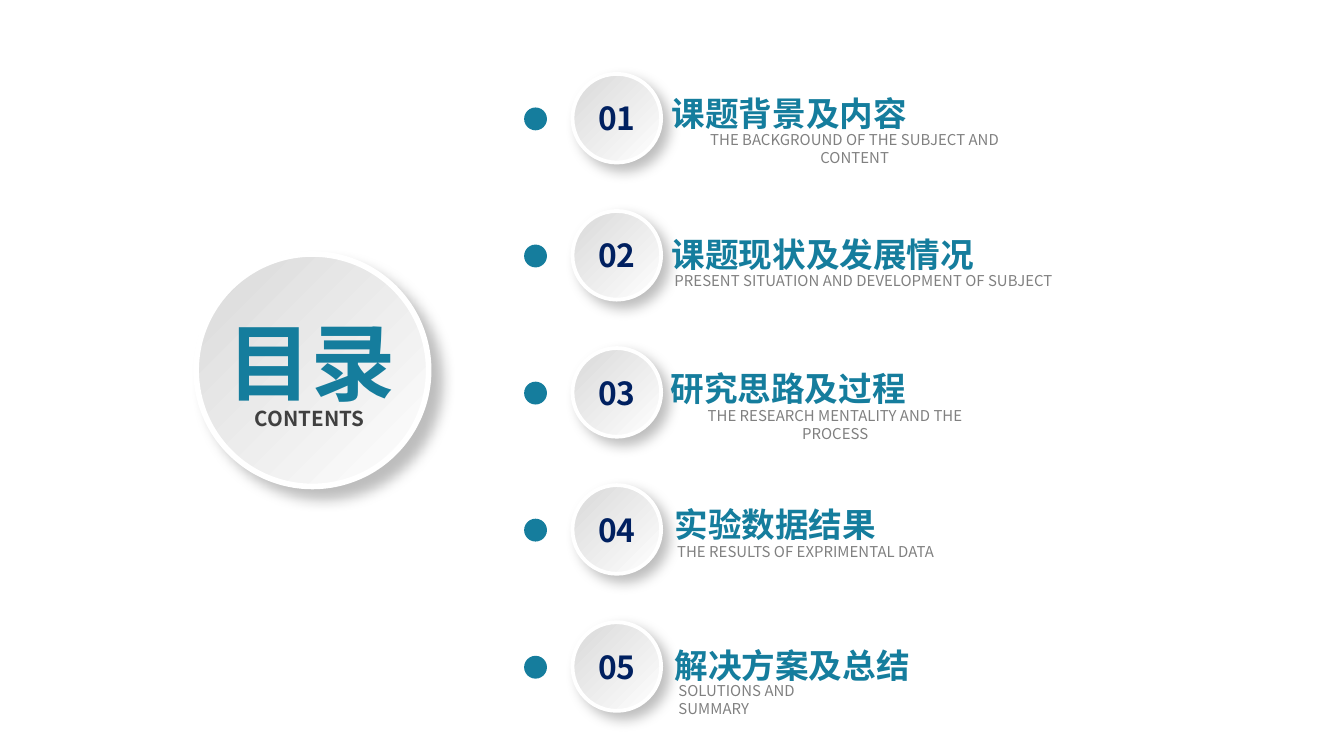
from lxml import etree
from pptx import Presentation
from pptx.dml.color import RGBColor
from pptx.enum import shapes, text
from pptx.oxml.ns import qn
from pptx.util import Inches, Pt

TEAL = RGBColor(0x15, 0x7D, 0x9D)
NAVY = RGBColor(0x00, 0x20, 0x60)
DARK = RGBColor(0x40, 0x40, 0x40)
GREY = RGBColor(0x80, 0x80, 0x80)
SILVER = RGBColor(0xD9, 0xD9, 0xD9)
WHITE = RGBColor(0xFF, 0xFF, 0xFF)
FONT = "Noto Sans CJK SC"
LEFT, CENTER = text.PP_ALIGN.LEFT, text.PP_ALIGN.CENTER
TIGHT = {"margin_left": Inches(0.07), "margin_right": Inches(0.07),
         "margin_top": Inches(0.04), "margin_bottom": Inches(0.04)}


def write(box, words, size, color, bold=True, align=LEFT, **frame_format):
    """Fill a shape with one formatted line, top-anchored unless told otherwise."""
    frame = box.text_frame
    settings = {"word_wrap": True, "auto_size": text.MSO_AUTO_SIZE.NONE,
                "vertical_anchor": text.MSO_ANCHOR.TOP, **frame_format}
    for name, value in settings.items():
        setattr(frame, name, value)
    paragraph = frame.paragraphs[0]
    paragraph.alignment = align
    span = paragraph.add_run()
    span.text = words
    span.font.color.rgb = color
    for name, value in {"size": Pt(size), "bold": bold, "name": FONT}.items():
        setattr(span.font, name, value)
    etree.SubElement(span.font._element, qn("a:ea"), typeface=FONT)


def add_raised_disc(left, top, size, line_width, distance):
    """Add a grey-to-white disc with a white rim and a soft shadow."""
    disc = page.shapes.add_shape(shapes.MSO_SHAPE.OVAL, Inches(left), Inches(top),
                                 Inches(size), Inches(size))
    disc.fill.gradient()
    disc.fill.gradient_angle = 315
    for stop, color, position in zip(disc.fill.gradient_stops, (SILVER, WHITE), (0, 1)):
        stop.color.rgb = color
        stop.position = position
    disc.line.color.rgb = WHITE
    disc.line.width = Pt(line_width)
    disc.shadow.inherit = False
    effects = disc.element.spPr.find(qn("a:effectLst"))
    shadow = etree.SubElement(effects, qn("a:outerShdw"), blurRad=str(Pt(7)),
                              dist=str(Pt(distance)), dir="2700000",
                              algn="tl", rotWithShape="0")
    black = etree.SubElement(shadow, qn("a:srgbClr"), val="000000")
    etree.SubElement(black, qn("a:alpha"), val="25000")
    return disc


deck = Presentation()
deck.slide_width = Inches(10)
deck.slide_height = deck.slide_width * 9 // 16
page = deck.slides.add_slide(deck.slide_layouts[5])

# Contents medallion, with the slide title on top of it
add_raised_disc(1.46, 1.89, 1.73, 3, 8)
title = page.shapes.title
title.left, title.top = Inches(1.53), Inches(2.27)
title.width, title.height = Inches(1.58), Inches(0.83)
title.element.getparent().append(title.element)
write(title, "目录", 45, TEAL, align=CENTER, **TIGHT)
caption = page.shapes.add_textbox(Inches(1.57), Inches(2.98), Inches(1.47), Inches(0.26))
write(caption, "CONTENTS", 11, DARK, align=CENTER, **TIGHT)

# heading, left, top, width; subtitle, left, top, width, alignment
CHAPTERS = [
    ("课题背景及内容", 4.9, 0.64, 1.97,
     "THE BACKGROUND OF THE SUBJECT AND CONTENT", 5.09, 0.92, 2.54, CENTER),
    ("课题现状及发展情况", 4.9, 1.69, 2.47,
     "PRESENT SITUATION AND DEVELOPMENT OF SUBJECT", 4.92, 1.97, 4.69, LEFT),
    ("研究思路及过程", 4.89, 2.69, 1.97,
     "THE RESEARCH MENTALITY AND THE PROCESS", 5.05, 2.98, 2.33, CENTER),
    ("实验数据结果", 4.92, 3.7, 1.72,
     "THE RESULTS OF EXPRIMENTAL DATA", 4.94, 3.99, 2.4, LEFT),
    ("解决方案及总结", 4.92, 4.75, 1.97,
     "SOLUTIONS AND SUMMARY", 4.95, 5.02, 1.44, LEFT),
]
PITCH = 1.02

for index, chapter in enumerate(CHAPTERS):
    heading, left, top, width, subtitle, sub_left, sub_top, sub_width, align = chapter
    dot = page.shapes.add_shape(shapes.MSO_SHAPE.OVAL, Inches(3.9),
                                Inches(0.8 + index * PITCH), Inches(0.17), Inches(0.17))
    dot.fill.solid()
    dot.fill.fore_color.rgb = TEAL
    dot.line.fill.background()
    dot.shadow.inherit = False

    disc = add_raised_disc(4.26, 0.55 + index * PITCH, 0.66, 2, 5)
    write(disc, f"{index + 1:02}", 17, NAVY, align=CENTER,
          vertical_anchor=text.MSO_ANCHOR.MIDDLE, **TIGHT)

    box = page.shapes.add_textbox(Inches(left), Inches(top), Inches(width), Inches(0.4))
    write(box, heading, 18, TEAL, word_wrap=False)
    box = page.shapes.add_textbox(Inches(sub_left), Inches(sub_top),
                                  Inches(sub_width), Inches(0.24))
    write(box, subtitle, 8, GREY, bold=False, align=align)

deck.save("out.pptx")
